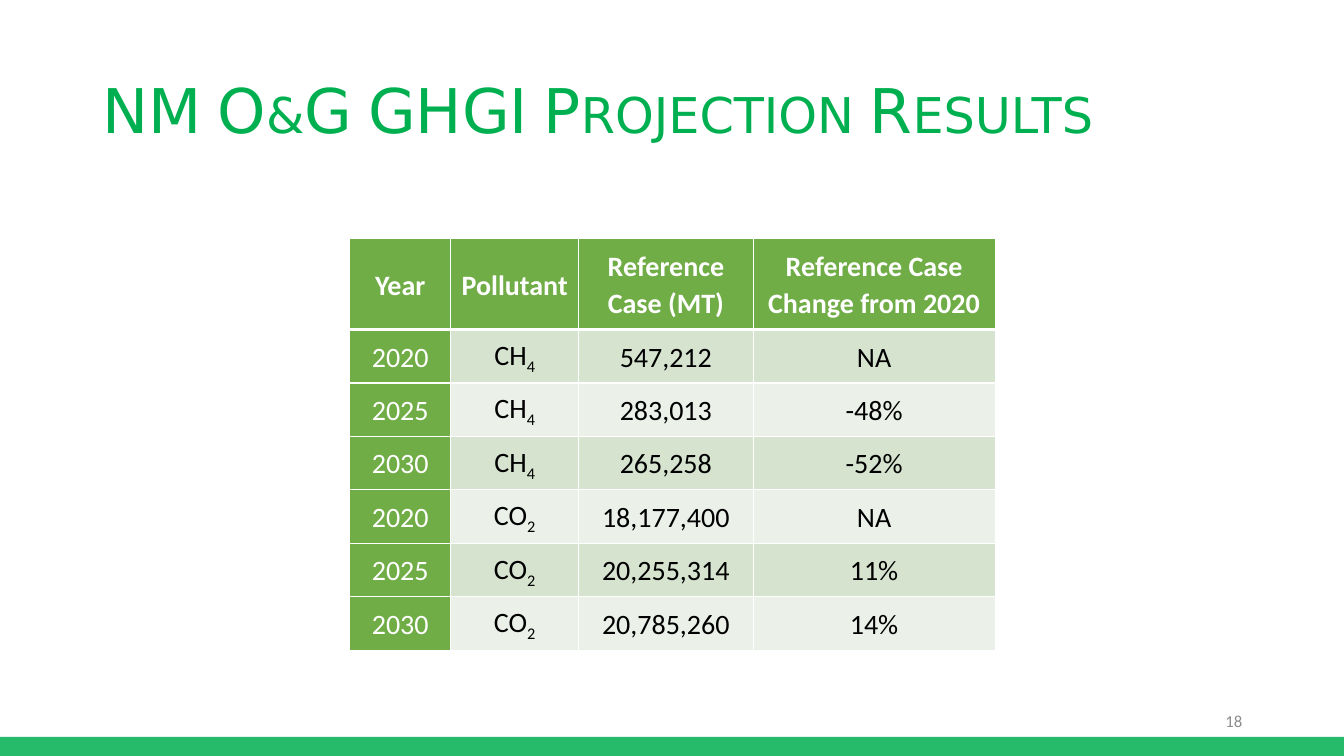
from dataclasses import dataclass

from lxml import etree
from pptx import Presentation
from pptx.dml.color import RGBColor
from pptx.enum import shapes, text
from pptx.oxml import ns
from pptx.util import Inches, Pt

COLORS = {
    "brand": "00B050",
    "header": "70AD47",
    "band_dark": "D5E3CF",
    "band_light": "EBF1E9",
    "white": "FFFFFF",
    "black": "000000",
    "gray": "8C8C8C",
}


@dataclass
class Label:
    words: str
    left: float
    top: float
    width: float
    height: float
    size: int
    font: str
    color: str
    align: text.PP_ALIGN
    spacing: float = 1.0
    small_caps: bool = False


@dataclass
class Result:
    year: str
    pollutant: str
    subscript: str
    amount: str
    change: str


LABELS = [
    Label("NM O&G GHGI Projection Results", 0.92, 0.4, 11.5, 1.45, 44,
          "DejaVu Sans", "brand", text.PP_ALIGN.LEFT, 0.9, True),
    Label("18", 9.42, 6.95, 3, 0.4, 12, "Calibri", "gray", text.PP_ALIGN.RIGHT),
]
HEADINGS = ["Year", "Pollutant", "Reference Case (MT)", "Reference Case Change from 2020"]
RESULTS = [
    Result("2020", "CH", "4", "547,212", "NA"),
    Result("2025", "CH", "4", "283,013", "-48%"),
    Result("2030", "CH", "4", "265,258", "-52%"),
    Result("2020", "CO", "2", "18,177,400", "NA"),
    Result("2025", "CO", "2", "20,255,314", "11%"),
    Result("2030", "CO", "2", "20,785,260", "14%"),
]
COLUMN_WIDTHS = [1, 1.27, 1.73, 2.4]
HEADER_HEIGHT, ROW_HEIGHT = 0.9, 0.53


def rgb(name: str) -> RGBColor:
    return RGBColor.from_string(COLORS[name])


def add_footer_bar(page) -> None:
    bar = page.shapes.add_shape(shapes.MSO_SHAPE.RECTANGLE, 0, Inches(7.31),
                                Inches(13.33), Inches(0.19))
    bar.shadow.inherit = False
    bar.line.fill.background()
    bar.fill.solid()
    bar.fill.fore_color.rgb = rgb("brand")
    color = bar._element.spPr.find(".//" + ns.qn("a:srgbClr"))
    etree.SubElement(color, ns.qn("a:alpha"), val="85000")


def add_label(page, label: Label) -> None:
    box = page.shapes.add_textbox(Inches(label.left), Inches(label.top),
                                  Inches(label.width), Inches(label.height))
    frame = box.text_frame
    frame.word_wrap = True
    frame.vertical_anchor = text.MSO_ANCHOR.MIDDLE
    para = frame.paragraphs[0]
    para.alignment = label.align
    para.line_spacing = label.spacing
    para.font.size = Pt(label.size)
    para.font.name = label.font
    para.font.color.rgb = rgb(label.color)
    span = para.add_run()
    span.text = label.words
    if label.small_caps:
        span._r.get_or_add_rPr().set("cap", "small")


def set_borders(cell, top: int = 1, bottom: int = 1) -> None:
    properties = cell._tc.get_or_add_tcPr()
    sides = {"a:lnL": 1, "a:lnR": 1, "a:lnT": top, "a:lnB": bottom}
    for position, (side, points) in enumerate(sides.items()):
        line = etree.Element(ns.qn(side), w=str(Pt(points)))
        fill = etree.SubElement(line, ns.qn("a:solidFill"))
        etree.SubElement(fill, ns.qn("a:srgbClr"), val=COLORS["white"])
        properties.insert(position, line)


def fill_cell(cell, words: str, fill: str, color: str,
              bold: bool = False, subscript: str = "") -> None:
    cell.fill.solid()
    cell.fill.fore_color.rgb = rgb(fill)
    cell.vertical_anchor = text.MSO_ANCHOR.MIDDLE
    cell.margin_left = cell.margin_right = Inches(0.03)
    cell.margin_top = cell.margin_bottom = 0
    para = cell.text_frame.paragraphs[0]
    para.alignment = text.PP_ALIGN.CENTER
    para.line_spacing = 1.07
    para.font.size = Pt(20)
    para.font.name = "Calibri"
    # Run-level colour and weight take precedence over the table style
    for part in filter(None, (words, subscript)):
        span = para.add_run()
        span.text = part
        span.font.bold = bold
        span.font.color.rgb = rgb(color)
    if subscript:
        span._r.get_or_add_rPr().set("baseline", "-25000")


def add_results_table(page) -> None:
    height = HEADER_HEIGHT + ROW_HEIGHT * len(RESULTS)
    table = page.shapes.add_table(len(RESULTS) + 1, len(HEADINGS), Inches(3.47), Inches(2.37),
                                  Inches(sum(COLUMN_WIDTHS)), Inches(height)).table
    for column, width in zip(table.columns, COLUMN_WIDTHS):
        column.width = Inches(width)
    for index, row in enumerate(table.rows):
        row.height = Inches(ROW_HEIGHT if index else HEADER_HEIGHT)

    # Header row
    for column, heading in enumerate(HEADINGS):
        cell = table.cell(0, column)
        fill_cell(cell, heading, "header", "white", bold=True)
        set_borders(cell, bottom=3)

    # Banded result rows with a coloured year column
    for row, result in enumerate(RESULTS, start=1):
        band = "band_dark" if row % 2 else "band_light"
        fill_cell(table.cell(row, 0), result.year, "header", "white")
        fill_cell(table.cell(row, 1), result.pollutant, band, "black", subscript=result.subscript)
        fill_cell(table.cell(row, 2), result.amount, band, "black")
        fill_cell(table.cell(row, 3), result.change, band, "black")
        for column in range(len(HEADINGS)):
            set_borders(table.cell(row, column), top=3 if row == 1 else 1)


def main() -> None:
    deck = Presentation()
    deck.slide_width, deck.slide_height = Inches(13.33), Inches(7.5)
    page = deck.slides.add_slide(deck.slide_layouts[6])
    add_footer_bar(page)
    for label in LABELS:
        add_label(page, label)
    add_results_table(page)
    deck.save("out.pptx")


if __name__ == "__main__":
    main()
